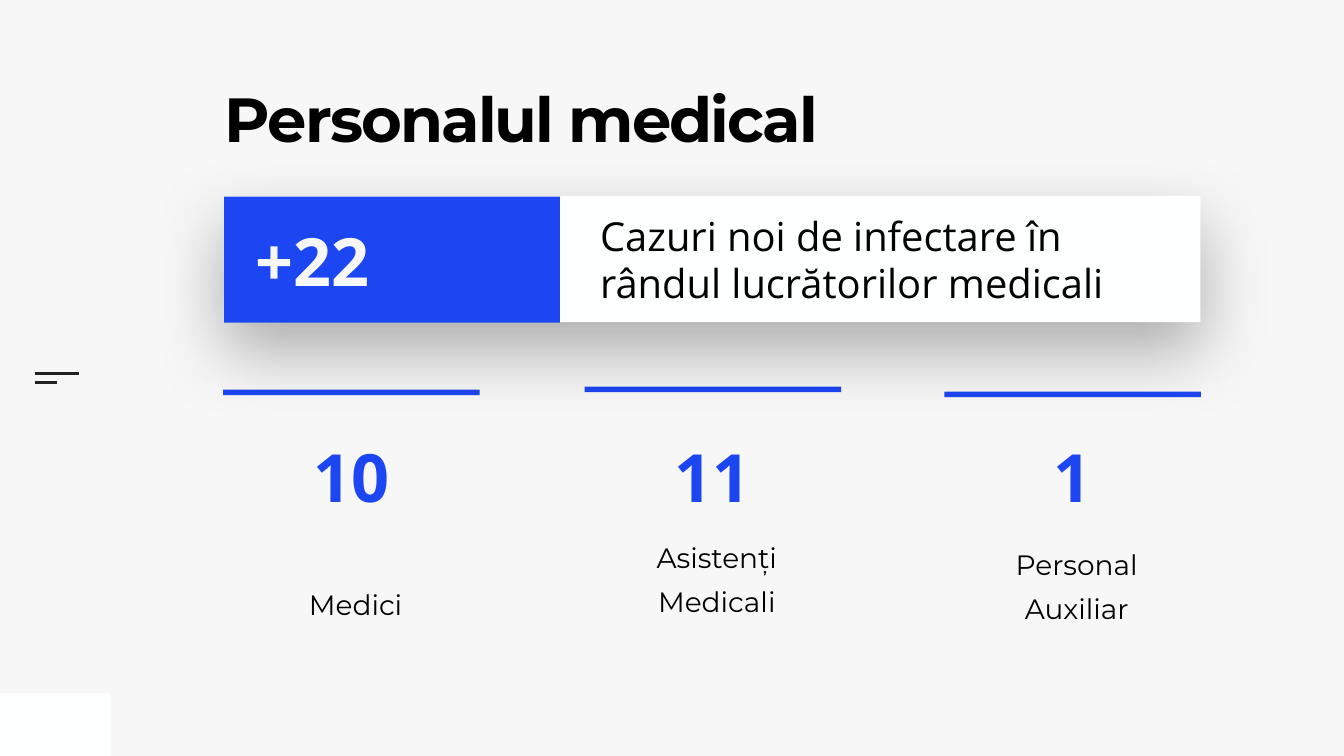
from lxml import etree
from pptx import Presentation
from pptx.dml.color import RGBColor
from pptx.enum.shapes import MSO_CONNECTOR, MSO_SHAPE
from pptx.enum.text import MSO_ANCHOR, PP_ALIGN
from pptx.oxml.ns import qn
from pptx.util import Pt

PX = 9144  # 100 px to the inch
RECTANGLE = MSO_SHAPE.RECTANGLE
STRAIGHT = MSO_CONNECTOR.STRAIGHT
LEFT, CENTER = PP_ALIGN.LEFT, PP_ALIGN.CENTER
TOP, MIDDLE, BOTTOM = MSO_ANCHOR.TOP, MSO_ANCHOR.MIDDLE, MSO_ANCHOR.BOTTOM

COLORS = {name: RGBColor.from_string(value) for name, value in {
    "background": "F7F7F7", "white": "FEFFFF", "blue": "1D46F3",
    "black": "000000", "dash": "222222"}.items()}

prs = Presentation()
prs.slide_width, prs.slide_height = 2667 * PX, 1500 * PX
slide = prs.slides.add_slide(prs.slide_layouts[6])
slide.background.fill.solid()
slide.background.fill.fore_color.rgb = COLORS["background"]


def add_rect(left, top, width, height, color):
    rect = slide.shapes.add_shape(
        RECTANGLE, left * PX, top * PX, width * PX, height * PX)
    rect.shadow.inherit = False
    rect.fill.solid()
    rect.fill.fore_color.rgb = COLORS[color]
    rect.line.fill.background()
    return rect


def write(shape, text, font, color, anchor=MIDDLE, insets=(10, 10, 10, 10), **spacing):
    """Fill a shape with one paragraph; insets run left, top, right, bottom."""
    frame = shape.text_frame
    frame.word_wrap = True
    frame.vertical_anchor = anchor
    for side, inset in zip(("left", "top", "right", "bottom"), insets):
        setattr(frame, f"margin_{side}", inset * PX)
    paragraph = frame.paragraphs[0]
    for name, value in spacing.items():
        setattr(paragraph, name, value)
    run = paragraph.add_run()
    run.text = text
    for name, value in font.items():
        setattr(run.font, name, value)
    run.font.color.rgb = COLORS[color]
    return run


TITLE = {"name": "Montserrat", "size": Pt(89), "bold": True}
LABEL = {"name": "Montserrat", "size": Pt(40)}
NUMBER = {"name": "Open Sans", "size": Pt(95), "bold": True}
BANNER = {"name": "Open Sans", "size": Pt(57)}

# Page corner and menu dashes
add_rect(0, 1376, 220, 124, "white")
for y, right in ((741, 157), (759, 113)):
    dash = slide.shapes.add_connector(STRAIGHT, 69 * PX, y * PX, right * PX, y * PX)
    dash.line.color.rgb = COLORS["dash"]
    dash.line.width = Pt(3)
    etree.SubElement(dash._element.spPr, qn("a:effectLst"))

# Cards: label, left, card top, bar top, number
STAFF = [
    ("Medici", 443, 773, 773, "10"),
    ("Asistenți Medicali", 1160, 767, 767, "11"),
    ("Personal Auxiliar", 1874, 781, 777, "1"),
]
CARD_WIDTH = 509
for label, left, card_top, bar_top, number in STAFF:
    card = add_rect(left, card_top, CARD_WIDTH, 546, "background")
    write(card, label, LABEL, "black", BOTTOM, (55, 71, 39, 87),
          alignment=CENTER, line_spacing=1.3, space_before=Pt(20))
    add_rect(left, bar_top, CARD_WIDTH, 11, "blue")

title = slide.shapes.add_textbox(446 * PX, 187 * PX, 1301 * PX, 273 * PX)
title_run = write(title, "Personalul medical", TITLE, "black", TOP, (0, 0, 0, 0),
                  alignment=LEFT, line_spacing=0.8)
title_run.font._element.set("spc", "-270")

# Banner with a soft shadow below
banner = add_rect(445, 389, 1937, 250, "white")
effects = banner._element.spPr.find(qn("a:effectLst"))
glow = etree.SubElement(effects, qn("a:outerShdw"), blurRad=str(Pt(100)),
                        dist=str(Pt(40)), dir="5400000", rotWithShape="0")
shade = etree.SubElement(glow, qn("a:srgbClr"), val="000000")
etree.SubElement(shade, qn("a:alpha"), val="30000")
add_rect(445, 390, 666, 250, "blue")

# Banner texts and card numbers
TEXTS = [
    ("Cazuri noi de infectare în rândul lucrătorilor medicali",
     (1181, 408, 1176, 212), BANNER, "black", LEFT),
    ("+22", (498, 425, 603, 180), NUMBER, "background", LEFT),
]
for label, left, card_top, bar_top, number in STAFF:
    TEXTS.append((number, (left, 854, CARD_WIDTH, 180), NUMBER, "blue", CENTER))
for text, box, font, color, alignment in TEXTS:
    textbox = slide.shapes.add_textbox(*(length * PX for length in box))
    write(textbox, text, font, color, alignment=alignment)

prs.save("out.pptx")
